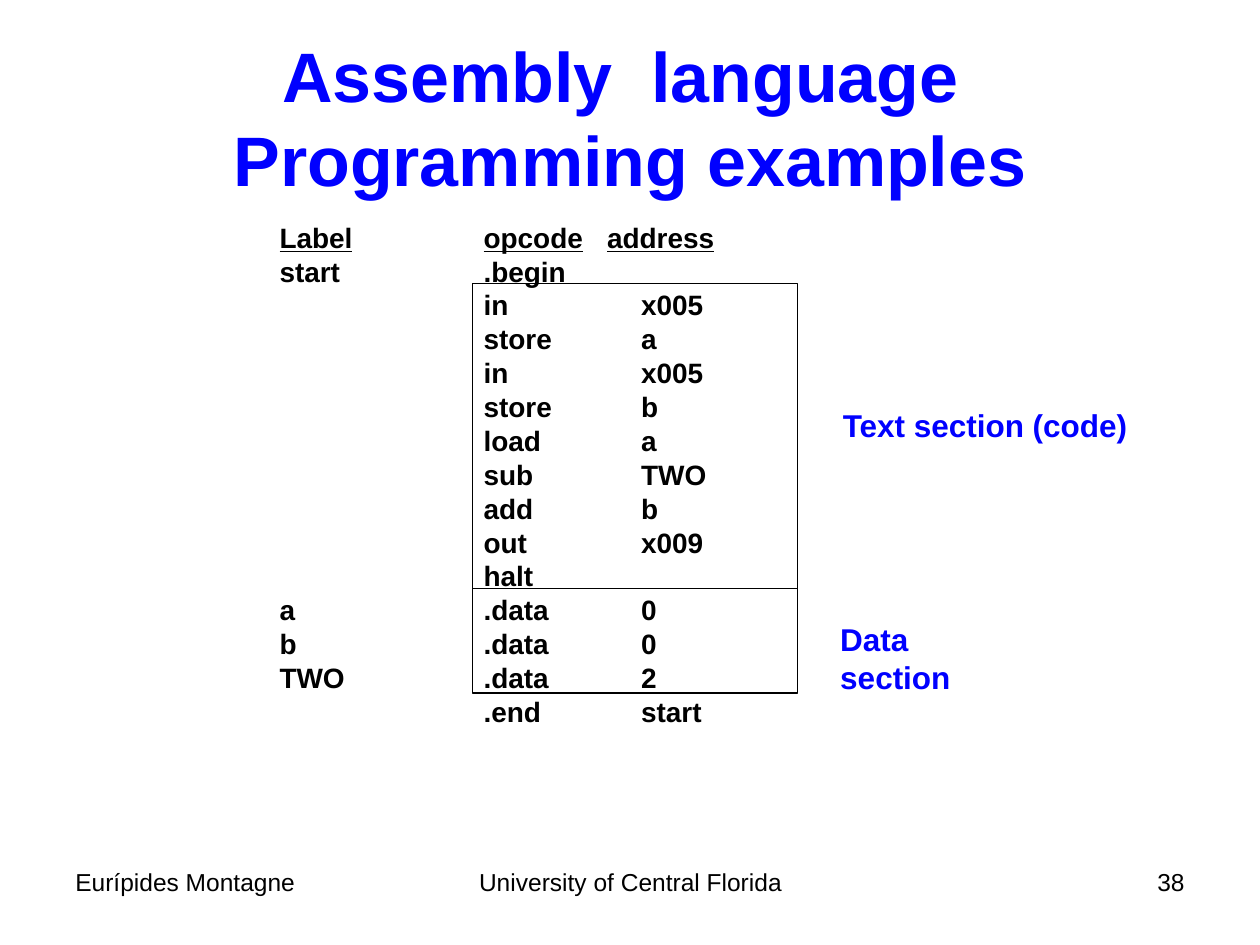
from lxml.etree import SubElement
from pptx import Presentation
from pptx.dml.color import RGBColor as Color
from pptx.enum.shapes import MSO_SHAPE as Shape
from pptx.enum.text import MSO_ANCHOR as Anchor, MSO_AUTO_SIZE as AutoSize, PP_ALIGN as Align
from pptx.oxml.ns import qn
from pptx.util import Inches, Pt

COLORS = {"ink": "000000", "accent": "0000FF"}
HEADER_STOPS = (0.37, 1.99, 2.97)
CODE_STOPS = (0.37, 1.99, 3.24)
BOX_LEFT, BOX_WIDTH = 3.75, 2.58
FOOTER_TOP, FOOTER_HEIGHT = 6.83, 0.52

HEADER = ("Label", "opcode", "address")
PROGRAM = [
    ("start", ".begin"),
    ("", "in", "x005"),
    ("", "store", "a"),
    ("", "in", "x005"),
    ("", "store", "b"),
    ("", "load", "a"),
    ("", "sub", "TWO"),
    ("", "add", "b"),
    ("", "out", "x009"),
    ("", "halt"),
    ("a", ".data", "0"),
    ("b", ".data", "0"),
    ("TWO", ".data", "2"),
    ("", ".end", "start"),
]
FOOTERS = [
    ("Eurípides Montagne", 0.5, 2.33, Align.LEFT),
    ("University of Central Florida", 3.42, 3.17, Align.CENTER),
    ("38", 7.17, 2.33, Align.RIGHT),
]
SECTIONS = [
    ("Text section (code)", (6.59, 3.17, 2.55, 0.4), False),
    ("Data section", (6.57, 4.87, 1.68, 0.4), True),
]


def set_values(target, values):
    for name, value in values.items():
        setattr(target, name, value)


def place(box, left, top, width, height):
    sizes = {"left": left, "top": top, "width": width, "height": height}
    set_values(box, {name: Inches(size) for name, size in sizes.items()})


def add_span(para, text, size, color="ink", bold=False, underline=False):
    span = para.add_run()
    span.text = text
    set_values(span.font, {"name": "Arial", "size": Pt(size), "bold": bold, "underline": underline})
    span.font.color.rgb = Color.from_string(COLORS[color])


def add_text_frame(page, bounds, wrap=True):
    frame = page.shapes.add_textbox(*map(Inches, bounds)).text_frame
    frame.word_wrap = wrap
    return frame


def add_label(page, text, bounds, size, color="ink", bold=False, align=Align.LEFT, wrap=True):
    frame = add_text_frame(page, bounds, wrap)
    para = frame.paragraphs[0]
    para.alignment = align
    add_span(para, text, size, color, bold)
    return frame


def add_border(page, top, height):
    border = page.shapes.add_shape(Shape.RECTANGLE, *map(Inches, (BOX_LEFT, top, BOX_WIDTH, height)))
    border.shadow.inherit = False
    border.fill.background()
    border.line.color.rgb = Color.from_string(COLORS["ink"])
    border.line.width = Pt(0.75)


def format_code_line(para, stops):
    set_values(para, {"line_spacing": 0.8, "space_before": Pt(4)})
    tabs = SubElement(para._p.get_or_add_pPr(), qn("a:tabLst"))
    for stop in stops:
        SubElement(tabs, qn("a:tab"), pos=str(Inches(stop)), algn="l")


def fill_title(title):
    place(title, 0.5, 0.21, 9, 1.43)
    set_values(title.text_frame, {"auto_size": AutoSize.NONE, "vertical_anchor": Anchor.MIDDLE})
    para = title.text_frame.paragraphs[0]
    para.alignment = Align.CENTER
    add_span(para, "Assembly  language ", 40, "accent", True)
    para.add_line_break()
    add_span(para, "Programming examples", 40, "accent", True)


def add_listing(page):
    frame = add_text_frame(page, (1.75, 1.75, 5.58, 5.41))
    header = frame.paragraphs[0]
    format_code_line(header, HEADER_STOPS)
    for word in HEADER:
        add_span(header, "\t", 16, bold=True)
        add_span(header, word, 16, bold=True, underline=True)
    for cells in PROGRAM:
        para = frame.add_paragraph()
        format_code_line(para, CODE_STOPS)
        add_span(para, "".join("\t" + cell for cell in cells), 16, bold=True)


def main():
    deck = Presentation()
    set_values(deck, {"slide_width": Inches(10), "slide_height": Inches(7.5)})
    page = deck.slides.add_slide(deck.slide_layouts[5])
    fill_title(page.shapes.title)
    add_listing(page)
    for text, left, width, align in FOOTERS:
        add_label(page, text, (left, FOOTER_TOP, width, FOOTER_HEIGHT), 14, align=align)
    add_border(page, 2.25, 2.42)
    add_border(page, 4.67, 0.83)
    for text, bounds, wrap in SECTIONS:
        frame = add_label(page, text, bounds, 18, "accent", True, wrap=wrap)
        if wrap:
            frame.margin_right = Inches(0.2)
    deck.save("out.pptx")


if __name__ == "__main__":
    main()
